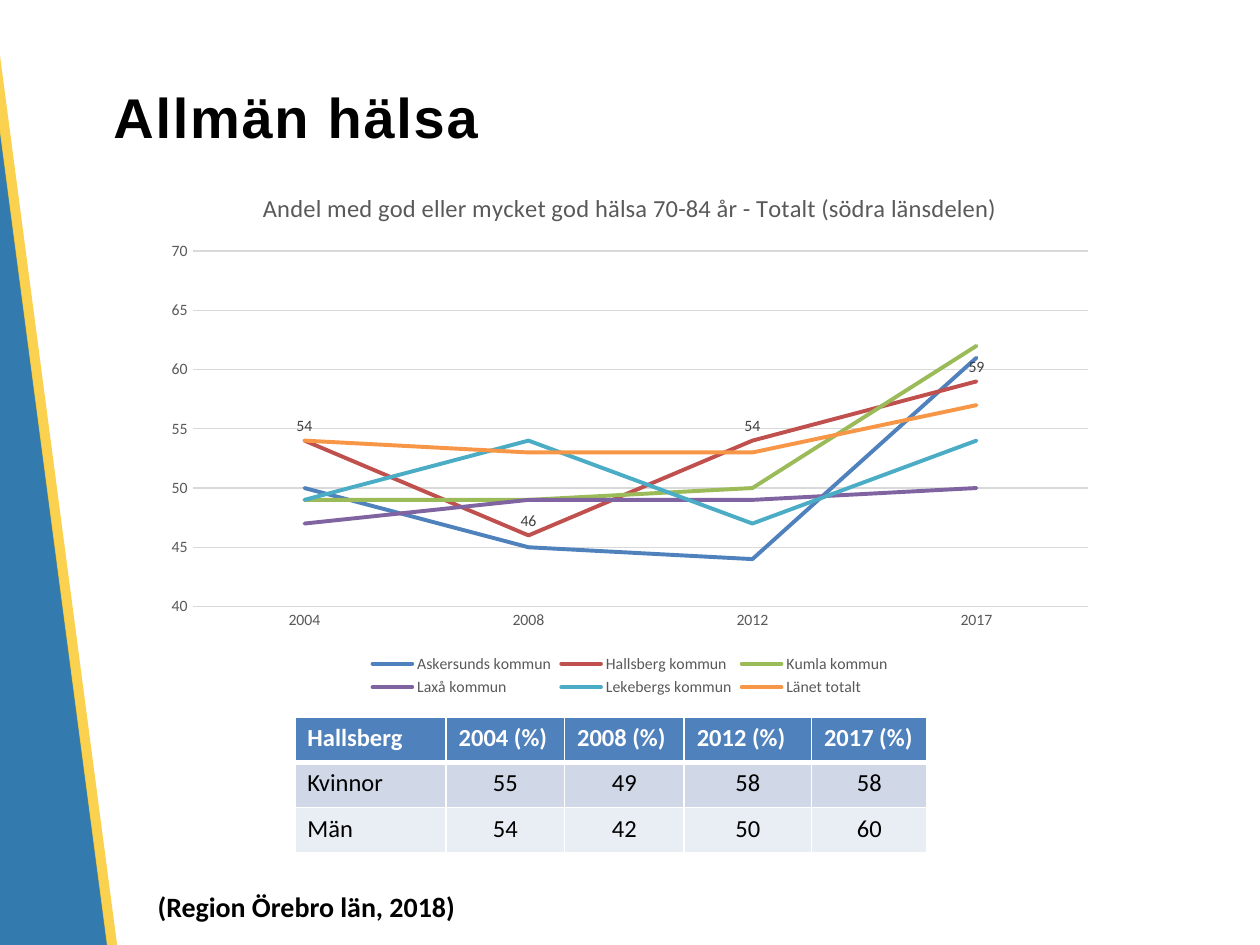
import dataclasses
import pptx
import pptx.chart.data
import pptx.dml.color
import pptx.enum.chart
import pptx.enum.shapes
import pptx.enum.text
import pptx.oxml
import pptx.oxml.ns
import pptx.util

Pt = pptx.util.Pt
RGB = pptx.dml.color.RGBColor

BLACK = RGB(0x00, 0x00, 0x00)
WHITE = RGB(0xFF, 0xFF, 0xFF)
DARK = RGB(0x40, 0x40, 0x40)
GREY = RGB(0x59, 0x59, 0x59)
PALE = RGB(0xD9, 0xD9, 0xD9)
NAVY = RGB(0x00, 0x5B, 0x9C)
GOLD = RGB(0xFA, 0xC8, 0x28)
HEAD = RGB(0x4F, 0x81, 0xBD)
BANDS = (HEAD, RGB(0xD0, 0xD8, 0xE8), RGB(0xE9, 0xED, 0xF4))


@dataclasses.dataclass
class Bar:
    left: float
    top: float
    width: float
    height: float
    color: RGB
    alpha: int


@dataclasses.dataclass
class Line:
    name: str
    values: tuple
    color: RGB
    labels: bool = False


BARS = (
    Bar(-37.4, -118.1, 65.5, 815.8, NAVY, 80),
    Bar(26.9, -127.4, 5.8, 815, GOLD, 81),
)
YEARS = ("2004", "2008", "2012", "2017")
LINES = (
    Line("Askersunds kommun", (50, 45, 44, 61), HEAD),
    Line("Hallsberg kommun", (54, 46, 54, 59), RGB(0xC0, 0x50, 0x4D), True),
    Line("Kumla kommun", (49, 49, 50, 62), RGB(0x9B, 0xBB, 0x59)),
    Line("Laxå kommun", (47, 49, 49, 50), RGB(0x80, 0x64, 0xA2)),
    Line("Lekebergs kommun", (49, 54, 47, 54), RGB(0x4B, 0xAC, 0xC6)),
    Line("Länet totalt", (54, 53, 53, 57), RGB(0xF7, 0x96, 0x46)),
)
ROWS = (
    ("Hallsberg", *(f"{year} (%)" for year in YEARS)),
    ("Kvinnor", "55", "49", "58", "58"),
    ("Män", "54", "42", "50", "60"),
)
COLS = (86.4, 67.7, 68.4, 72.7, 66.2)


def style(font, size: float, color: RGB, bold: bool = False, name: str = "Calibri") -> None:
    font.name, font.size, font.bold = name, Pt(size), bold
    font.color.rgb = color


def draw_bar(slide, bar: Bar) -> None:
    shape = slide.shapes.add_shape(
        pptx.enum.shapes.MSO_SHAPE.RECTANGLE,
        Pt(bar.left), Pt(bar.top), Pt(bar.width), Pt(bar.height))
    shape.rotation = 352.5
    shape.shadow.inherit = False
    shape.fill.solid()
    shape.fill.fore_color.rgb = bar.color
    shape.line.fill.background()
    color = shape.element.find(".//" + pptx.oxml.ns.qn("a:srgbClr"))
    color.append(pptx.oxml.parse_xml(
        f'<a:alpha {pptx.oxml.ns.nsdecls("a")} val="{bar.alpha * 1000}"/>'))


def draw_title(slide, text: str) -> None:
    title = slide.shapes.title
    slide.shapes.element.append(title.element)  # in front of the bars
    title.left, title.top, title.width, title.height = Pt(57.6), Pt(21.6), Pt(622.8), Pt(90)
    frame = title.text_frame
    frame.text = text
    frame.vertical_anchor = pptx.enum.text.MSO_ANCHOR.MIDDLE
    par = frame.paragraphs[0]
    par.alignment = pptx.enum.text.PP_ALIGN.LEFT
    style(par.font, 32, BLACK, True, "Arial")
    par.runs[0].font._element.set("spc", "100")


def add_edge(cell, side: str, width: float) -> None:
    cell._tc.get_or_add_tcPr().append(pptx.oxml.parse_xml(
        f'<a:ln{side} {pptx.oxml.ns.nsdecls("a")} w="{Pt(width)}"><a:solidFill>'
        f'<a:srgbClr val="{WHITE}"/></a:solidFill></a:ln{side}>'))


def draw_table(slide) -> None:
    table = slide.shapes.add_table(
        len(ROWS), len(COLS), Pt(168.5), Pt(409.7), Pt(sum(COLS)), Pt(77.7)).table
    for col, width in zip(table.columns, COLS):
        col.width = Pt(width)
    for r, row in enumerate(ROWS):
        table.rows[r].height = Pt(25.9)
        for c, text in enumerate(row):
            cell = table.cell(r, c)
            # The rule under the header is thicker
            widths = {"L": 1, "R": 1, "T": 3 if r == 1 else 1, "B": 3 if r == 0 else 1}
            for side, width in widths.items():
                add_edge(cell, side, width)
            cell.fill.solid()
            cell.fill.fore_color.rgb = BANDS[r]
            cell.text = text
            par = cell.text_frame.paragraphs[0]
            if r and c:
                par.alignment = pptx.enum.text.PP_ALIGN.CENTER
            style(par.font, 14, BLACK if r else WHITE, r == 0)


def draw_note(slide, text: str) -> None:
    box = slide.shapes.add_textbox(Pt(83), Pt(504.7), Pt(195.8), Pt(26.6))
    frame = box.text_frame
    frame.word_wrap = True
    frame.auto_size = pptx.enum.text.MSO_AUTO_SIZE.SHAPE_TO_FIT_TEXT
    frame.text = text
    style(frame.paragraphs[0].font, 16, BLACK, True)


def draw_chart(slide, title: str) -> None:
    data = pptx.chart.data.CategoryChartData(number_format="0")
    data.categories = YEARS
    for line in LINES:
        data.add_series(line.name, line.values)
    chart = slide.shapes.add_chart(
        pptx.enum.chart.XL_CHART_TYPE.LINE,
        Pt(87.1), Pt(96.6), Pt(545.8), Pt(304.2), data).chart
    style(chart.font, 10, BLACK)

    # Title and legend
    chart.has_title = True
    chart.chart_title.include_in_layout = False
    chart.chart_title.text_frame.text = title
    style(chart.chart_title.text_frame.paragraphs[0].font, 14, GREY)
    chart.has_legend = True
    chart.legend.position = pptx.enum.chart.XL_LEGEND_POSITION.BOTTOM
    chart.legend.include_in_layout = False
    style(chart.legend.font, 9, GREY)

    # Axes
    cats, vals = chart.category_axis, chart.value_axis
    for axis in (cats, vals):
        axis.major_tick_mark = pptx.enum.chart.XL_TICK_MARK.NONE
        axis.minor_tick_mark = pptx.enum.chart.XL_TICK_MARK.NONE
        style(axis.tick_labels.font, 9, GREY)
    vals.minimum_scale, vals.maximum_scale, vals.major_unit = 40, 70, 5
    vals.tick_labels.number_format = "0"
    vals.tick_labels.number_format_is_linked = False
    vals.format.line.fill.background()
    vals.has_major_gridlines = True
    for rule in (cats.format.line, vals.major_gridlines.format.line):
        rule.color.rgb = PALE
        rule.width = Pt(0.75)

    # Series with round line ends
    for series, line in zip(chart.plots[0].series, LINES):
        series.smooth = False
        series.marker.style = pptx.enum.chart.XL_MARKER_STYLE.NONE
        series.format.line.color.rgb = line.color
        series.format.line.width = Pt(2.25)
        series.format.line._get_or_add_ln().set("cap", "rnd")
        if line.labels:
            labels = series.data_labels
            labels.show_value = True
            labels.position = pptx.enum.chart.XL_LABEL_POSITION.ABOVE
            labels.number_format = "0"
            labels.number_format_is_linked = False
            style(labels.font, 9, DARK)
    chart.plots[0].vary_by_categories = False


def main() -> None:
    deck = pptx.Presentation()
    deck.slide_width, deck.slide_height = Pt(720), Pt(540)
    slide = deck.slides.add_slide(deck.slide_layouts[5])
    for bar in BARS:
        draw_bar(slide, bar)
    draw_title(slide, "Allmän hälsa")
    draw_table(slide)
    draw_note(slide, "(Region Örebro län, 2018)")
    draw_chart(slide, "Andel med god eller mycket god hälsa 70-84 år - Totalt (södra länsdelen)")
    deck.save("out.pptx")


if __name__ == "__main__":
    main()
